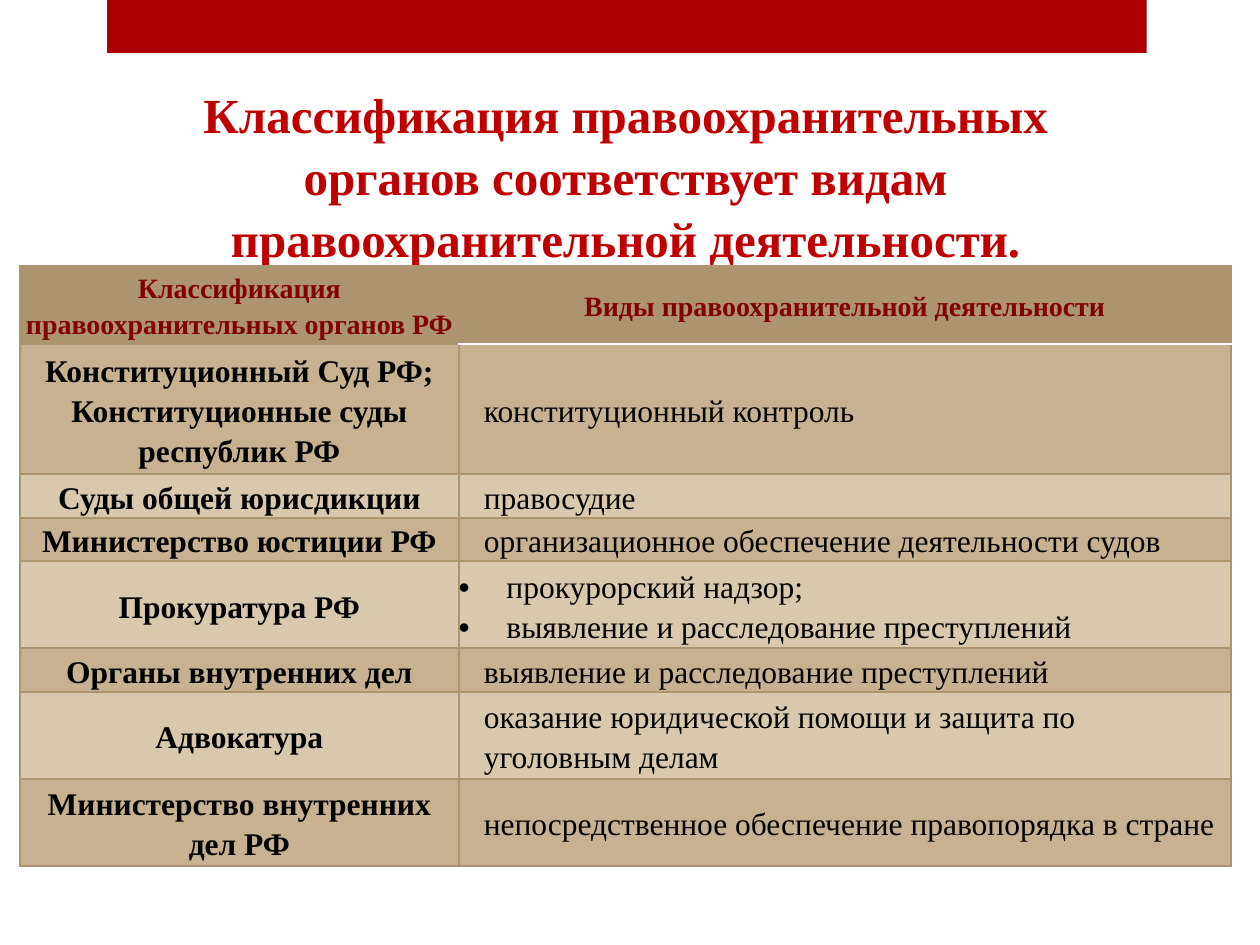
import pptx
import pptx.util
import pptx.dml.color
import pptx.enum.shapes
import pptx.enum.text
import pptx.oxml
from lxml import etree

COLORS = {
    "bar": "AD0101", "title": "C00000", "heading": "820101", "text": "000000",
    "edge": "AC956E", "dark": "C8B191", "light": "D9C8AE", "white": "FFFFFF",
}
FONT = "Times New Roman"
ALIGN = pptx.enum.text.PP_ALIGN
MIDDLE = pptx.enum.text.MSO_ANCHOR.MIDDLE

HEADINGS = ("Классификация\nправоохранительных органов РФ",
            "Виды правоохранительной деятельности")
# Bodies, their activities, and the number of text lines in the row
BODIES = [
    (["Конституционный Суд РФ;", "Конституционные суды республик РФ"],
     ["конституционный контроль"], 3),
    (["Суды общей юрисдикции"], ["правосудие"], 1),
    (["Министерство юстиции РФ"],
     ["организационное обеспечение деятельности судов"], 1),
    (["Прокуратура РФ"],
     ["прокурорский надзор;", "выявление и расследование преступлений"], 2),
    (["Органы внутренних дел"], ["выявление и расследование преступлений"], 1),
    (["Адвокатура"],
     ["оказание юридической помощи и защита по уголовным делам"], 2),
    (["Министерство внутренних дел РФ"],
     ["непосредственное обеспечение правопорядка в стране"], 2),
]


def rgb(name):
    return pptx.dml.color.RGBColor.from_string(COLORS[name])


def write(frame, lines, size=18, color="text", bold=False, align=ALIGN.LEFT,
          spacing=1.15, indent=0, bullet=None):
    """Fill a text frame with one paragraph per line."""
    frame.word_wrap = True
    for index, line in enumerate(lines):
        paragraph = frame.add_paragraph() if index else frame.paragraphs[0]
        paragraph.text = line
        paragraph.alignment = align
        paragraph.line_spacing = spacing
        for run in paragraph.runs:
            run.font.name = FONT
            run.font.size = pptx.util.Pt(size)
            run.font.bold = bold
            run.font.color.rgb = rgb(color)
        properties = paragraph._p.get_or_add_pPr()
        margin = pptx.util.Inches(indent)
        properties.set("marL", str(margin))
        properties.set("indent", str(-margin if bullet else 0))
        if bullet:
            etree.SubElement(properties, pptx.oxml.ns.qn("a:buFont"), typeface="Arial")
            etree.SubElement(properties, pptx.oxml.ns.qn("a:buChar"), char=bullet)


def border(cell, side, color, width):
    """Draw one side of a cell; sides go in the order L, R, T, B."""
    qn = pptx.oxml.ns.qn
    line = etree.SubElement(cell._tc.get_or_add_tcPr(), qn("a:ln" + side),
                            w=str(pptx.util.Pt(width)))
    fill = etree.SubElement(line, qn("a:solidFill"))
    etree.SubElement(fill, qn("a:srgbClr"), val=COLORS[color])


class Deck:
    """Holds the presentation and the current slide; lengths are slide shares."""

    def __init__(self, width, height):
        self.file = pptx.Presentation()
        self.file.slide_width = pptx.util.Inches(width)
        self.file.slide_height = pptx.util.Inches(height)
        self.slide = self.file.slides.add_slide(self.file.slide_layouts[6])

    def across(self, share):
        return round(self.file.slide_width * share)

    def down(self, share):
        return round(self.file.slide_height * share)

    def place(self, left, top, width, height):
        return (self.across(left), self.down(top),
                self.across(width), self.down(height))

    def bar(self, box, color):
        bar = self.slide.shapes.add_shape(
            pptx.enum.shapes.MSO_SHAPE.RECTANGLE, *self.place(*box))
        bar.shadow.inherit = False
        bar.fill.solid()
        bar.fill.fore_color.rgb = rgb(color)
        bar.line.fill.background()

    def text(self, box, lines, **style):
        frame = self.slide.shapes.add_textbox(*self.place(*box)).text_frame
        write(frame, lines, **style)

    def table(self, left, top, columns, rows):
        table = self.slide.shapes.add_table(
            len(rows), len(columns),
            *self.place(left, top, sum(columns), sum(rows))).table
        for column, share in zip(table.columns, columns):
            column.width = self.across(share)
        for row, share in zip(table.rows, rows):
            row.height = self.down(share)
        return table

    def cell(self, cell, lines, fill, edges=None, **style):
        for side in "LRTB":
            color, width = (edges or {}).get(side, ("edge", 1.25))
            border(cell, side, color, width)
        cell.fill.solid()
        cell.fill.fore_color.rgb = rgb(fill)
        cell.margin_left = cell.margin_right = 0
        cell.margin_top = cell.margin_bottom = 0
        cell.vertical_anchor = MIDDLE
        write(cell.text_frame, lines, **style)


def main():
    deck = Deck(10, 7.5)

    # Top bar and title
    deck.bar((0.085, 0, 0.825, 0.056), "bar")
    deck.text((0.083, 0.08, 0.827, 0.2),
              ["Классификация правоохранительных органов соответствует видам "
               "правоохранительной деятельности."],
              size=28, color="title", bold=True, align=ALIGN.CENTER, spacing=1.05)

    # Table frame: row heights follow the number of text lines
    heights = [0.083] + [0.046 * count for _, _, count in BODIES]
    table = deck.table(0.016, 0.281, (0.348, 0.613), heights)

    # Heading row, with a white rule under the second column
    rule = ("white", 1.75)
    for column, heading in enumerate(HEADINGS):
        deck.cell(table.cell(0, column), [heading], "edge",
                  edges={"B": rule} if column else None,
                  size=16, color="heading", bold=True, align=ALIGN.CENTER)

    # Banded body rows
    for row, (bodies, activities, _) in enumerate(BODIES, start=1):
        fill = "dark" if row % 2 else "light"
        listed = len(activities) > 1
        deck.cell(table.cell(row, 0), bodies, fill, bold=True, align=ALIGN.CENTER)
        deck.cell(table.cell(row, 1), activities, fill,
                  edges={"T": rule} if row == 1 else None,
                  indent=0.38 if listed else 0.2, bullet="•" if listed else None)

    deck.file.save("out.pptx")


if __name__ == "__main__":
    main()
